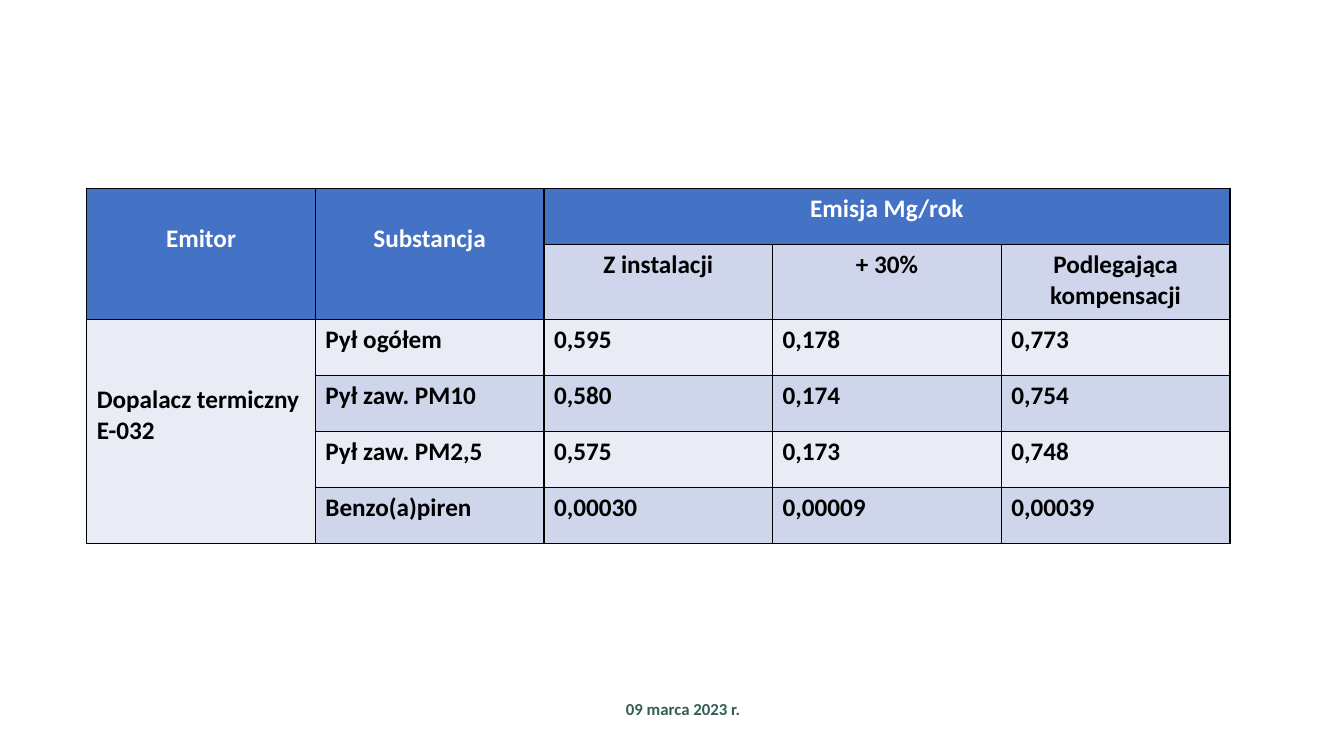
from dataclasses import dataclass

from lxml import etree
from pptx import Presentation
from pptx.dml.color import RGBColor
from pptx.enum.text import MSO_ANCHOR, PP_ALIGN
from pptx.oxml.ns import qn
from pptx.util import Inches, Pt

LEFT, CENTER = PP_ALIGN.LEFT, PP_ALIGN.CENTER
MIDDLE = MSO_ANCHOR.MIDDLE


@dataclass(frozen=True)
class Theme:
    """Colours and type sizes of the slide."""
    font: str = "Calibri"
    header: str = "4472C4"
    light: str = "E9EBF5"
    dark: str = "CFD5EA"
    white: str = "FFFFFF"
    black: str = "000000"
    green: str = "315D55"
    table_size: int = 18
    date_size: int = 12
    border: int = 1


HEADINGS = ["Emitor", "Substancja", "Emisja Mg/rok", "", ""]
SUBHEADINGS = ["", "", "Z instalacji", "+ 30%", "Podlegająca kompensacji"]
EMISSIONS = [
    ["Dopalacz termiczny E-032", "Pył ogółem", "0,595", "0,178", "0,773"],
    ["", "Pył zaw. PM10", "0,580", "0,174", "0,754"],
    ["", "Pył zaw. PM2,5", "0,575", "0,173", "0,748"],
    ["", "Benzo(a)piren", "0,00030", "0,00009", "0,00039"],
]
MERGES = [((0, 0), (1, 0)), ((0, 1), (1, 1)), ((0, 2), (0, 4)), ((2, 0), (5, 0))]
TOP_MARGINS = {(0, 0): 0.35, (0, 1): 0.35, (2, 0): 0.65}


def write(frame, text, *, font, size, color, align=LEFT, after=0):
    """Write one bold paragraph into a text frame."""
    paragraph = frame.paragraphs[0]
    paragraph.alignment = align
    paragraph.space_after = Pt(after)
    paragraph.font.size = Pt(size)
    if not text:
        return
    run = paragraph.add_run()
    run.text = text
    run.font.name = font
    run.font.size = Pt(size)
    run.font.bold = True
    run.font.color.rgb = RGBColor.from_string(color)


class SlideBuilder:
    """Holds the theme and the slide being built."""

    def __init__(self, slide, theme):
        """Keep the slide and its theme."""
        self.slide = slide
        self.theme = theme

    def date(self, text, left, top, width, height):
        """Add the date line."""
        box = self.slide.shapes.add_textbox(
            Inches(left), Inches(top), Inches(width), Inches(height))
        box.text_frame.word_wrap = True
        box.text_frame.vertical_anchor = MIDDLE
        write(box.text_frame, text, font=self.theme.font,
              size=self.theme.date_size, color=self.theme.green, after=2)

    def borders(self, cell):
        """Draw a thin line on all four sides of a cell."""
        properties = cell._tc.get_or_add_tcPr()
        for side in ("a:lnL", "a:lnR", "a:lnT", "a:lnB"):
            line = etree.SubElement(properties, qn(side), w=str(Pt(self.theme.border)))
            fill = etree.SubElement(line, qn("a:solidFill"))
            etree.SubElement(fill, qn("a:srgbClr"), val=self.theme.black)

    def cell(self, cell, text, fill, color, align, margin_top):
        """Style and fill one table cell."""
        self.borders(cell)
        cell.fill.solid()
        cell.fill.fore_color.rgb = RGBColor.from_string(fill)
        cell.margin_top = Inches(margin_top)
        write(cell.text_frame, text, font=self.theme.font,
              size=self.theme.table_size, color=color, align=align)

    def emission_table(self, left, top, width, height, subheading_height):
        """Add the emission table with its merged headings."""
        theme = self.theme
        rows = [HEADINGS, SUBHEADINGS, *EMISSIONS]
        table = self.slide.shapes.add_table(
            len(rows), len(HEADINGS), Inches(left), Inches(top),
            Inches(width), Inches(height)).table
        for row in table.rows:
            row.height = Inches((height - subheading_height) / (len(rows) - 1))
        table.rows[1].height = Inches(subheading_height)
        for start, end in MERGES:
            table.cell(*start).merge(table.cell(*end))
        for row, texts in enumerate(rows):
            for column, text in enumerate(texts):
                heading = row == 0 or (row == 1 and column < 2)
                band = theme.dark if row % 2 and column else theme.light
                self.cell(
                    table.cell(row, column), text,
                    fill=theme.header if heading else band,
                    color=theme.white if heading else theme.black,
                    align=CENTER if row < 2 else LEFT,
                    margin_top=TOP_MARGINS.get((row, column), 0.05))


def main():
    """Build and save the slide."""
    presentation = Presentation()
    presentation.slide_width = Inches(13.33)
    presentation.slide_height = Inches(7.5)
    slide = presentation.slides.add_slide(presentation.slide_layouts[6])
    builder = SlideBuilder(slide, Theme())
    builder.date("09 marca 2023 r.", 6.11, 6.82, 2.97, 0.42)
    builder.emission_table(0.86, 1.87, 11.34, 3.52, subheading_height=0.74)
    presentation.save("out.pptx")


if __name__ == "__main__":
    main()
